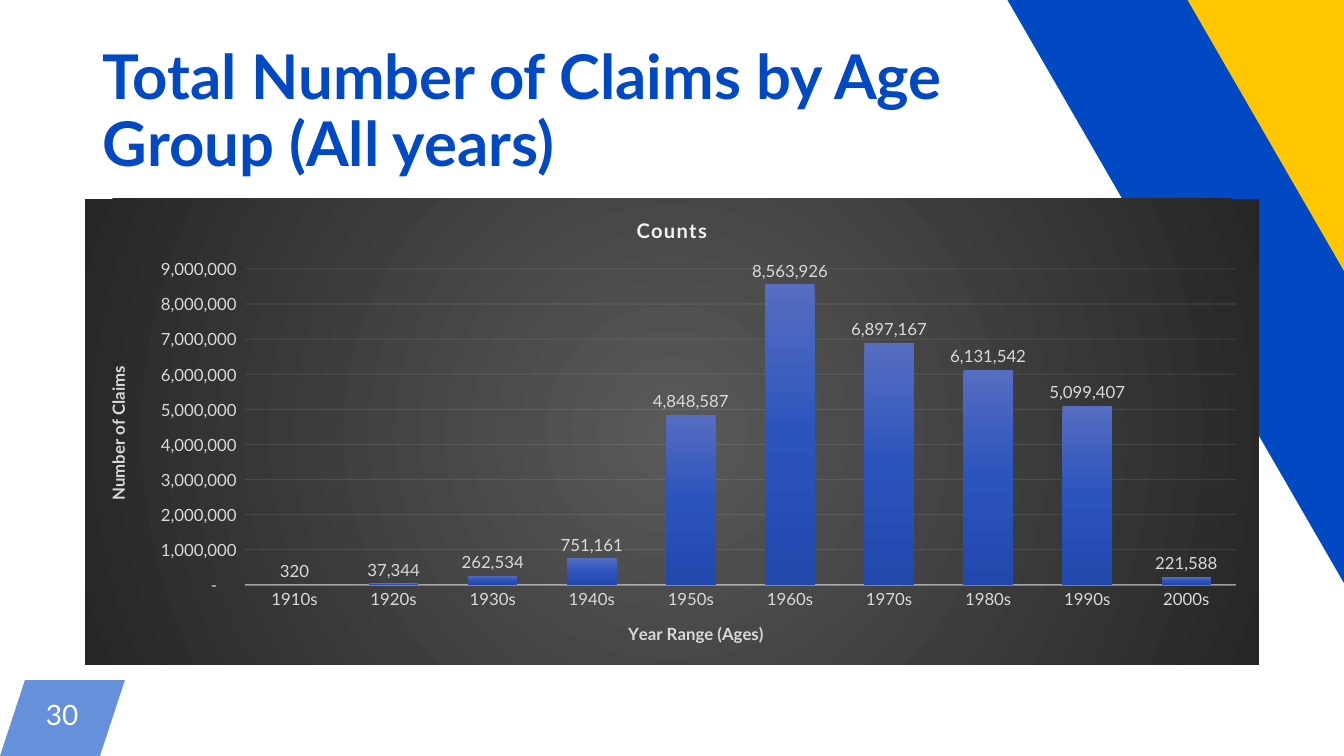
from lxml import etree
from pptx import Presentation
from pptx.chart.data import CategoryChartData
from pptx.dml.color import RGBColor
from pptx.enum.chart import XL_CHART_TYPE, XL_LABEL_POSITION, XL_TICK_MARK
from pptx.enum.text import MSO_ANCHOR, PP_ALIGN
from pptx.oxml import parse_xml
from pptx.oxml.ns import nsdecls, qn
from pptx.util import Emu, Pt

COLUMNS = XL_CHART_TYPE.COLUMN_CLUSTERED
OUTSIDE_END = XL_LABEL_POSITION.OUTSIDE_END
NO_TICK = XL_TICK_MARK.NONE
MIDDLE = MSO_ANCHOR.MIDDLE
LEFT, CENTER = PP_ALIGN.LEFT, PP_ALIGN.CENTER

COLORS = {
    "blue": "0049C2", "yellow": "FFC700", "white": "FFFFFF",
    "label": "D9D9D9", "light": "F2F2F2",
    "panel_center": "595959", "panel_edge": "262626",
    "bar_top": "566DC1", "bar_middle": "2C54BD", "bar_bottom": "2248AD",
}
NUMBER_FORMAT = '_(* #,##0_);_(* \\(#,##0\\);_(* "-"??_);_('
CLAIMS = {
    "1910s": 320, "1920s": 37344, "1930s": 262534, "1940s": 751161,
    "1950s": 4848587, "1960s": 8563926, "1970s": 6897167,
    "1980s": 6131542, "1990s": 5099407, "2000s": 221588,
}
CHART_BOX = (85, 199, 1174, 466)
PLOT_BOX = (245, 269, 991, 316)


def px(length):
    return Emu(round(length * 914400 / 100.8))


def rgb(name):
    return RGBColor.from_string(COLORS[name])


def set_alpha(colors, percent):
    for color in colors:
        etree.SubElement(color, qn("a:alpha")).set("val", str(percent * 1000))


def gradient(stops, direction):
    marks = "".join(
        f'<a:gs pos="{place * 1000}"><a:srgbClr val="{COLORS[name]}"/></a:gs>'
        for place, name in stops)
    return (f'<a:gradFill rotWithShape="1"><a:gsLst>{marks}</a:gsLst>'
            f'{direction}</a:gradFill>')


def shape_style(fill):
    return parse_xml(f'<c:spPr {nsdecls("c", "a")}>{fill}'
                     '<a:ln><a:noFill/></a:ln></c:spPr>')


def layout(left, top, width=None, height=None):
    """Manual chart layout for slide positions in px."""
    chart_left, chart_top, chart_width, chart_height = CHART_BOX
    parts = {"x": (left - chart_left) / chart_width,
             "y": (top - chart_top) / chart_height}
    target = ""
    if width:
        target = '<c:layoutTarget val="inner"/>'
        parts.update(w=width / chart_width, h=height / chart_height)
    modes = '<c:xMode val="edge"/><c:yMode val="edge"/>'
    values = "".join(f'<c:{key} val="{value:.4f}"/>' for key, value in parts.items())
    return parse_xml(f'<c:layout {nsdecls("c")}><c:manualLayout>{target}{modes}'
                     f'{values}</c:manualLayout></c:layout>')


class Slide:
    font = "Lato"

    def __init__(self, page):
        self.page = page

    def style(self, font, size, color, bold=False):
        font.name = self.font
        font.size = Pt(size)
        font.bold = bold
        font.color.rgb = rgb(color)

    def polygon(self, points, color, opacity=100):
        start, *others = [(px(x), px(y)) for x, y in points]
        builder = self.page.shapes.build_freeform(*start, scale=1.0)
        builder.add_line_segments(others, close=True)
        shape = builder.convert_to_shape()
        shape.shadow.inherit = False
        shape.fill.solid()
        shape.fill.fore_color.rgb = rgb(color)
        shape.line.fill.background()
        if opacity < 100:
            set_alpha(shape.element.xpath("./p:spPr/a:solidFill/a:srgbClr"), opacity)

    def text(self, bounds, lines, size, color, spacing, align=LEFT, bold=False,
             margin=None):
        box = self.page.shapes.add_textbox(*map(px, bounds))
        frame = box.text_frame
        frame.word_wrap = True
        frame.vertical_anchor = MIDDLE
        if margin is not None:
            frame.margin_left = frame.margin_right = px(margin)
            frame.margin_top = frame.margin_bottom = px(margin)
        para = frame.paragraphs[0]
        for index, line in enumerate(lines):
            if index:
                para.add_line_break()
            para.add_run().text = line
        para.alignment = align
        para.line_spacing = spacing
        self.style(para.font, size, color, bold)

    def chart_heading(self, title, words, size, color, corner):
        para = title.text_frame.paragraphs[0]
        span = para.add_run()
        span.text = words
        self.style(para.font, size, color, True)
        self.style(span.font, size, color, True)
        for old in title.element.findall(qn("c:layout")):
            title.element.remove(old)
        title.element.find(qn("c:tx")).addnext(layout(*corner))
        return span

    def axis(self, axis, words, corner):
        axis.major_tick_mark = axis.minor_tick_mark = NO_TICK
        self.style(axis.tick_labels.font, 12, "label")
        self.chart_heading(axis.axis_title, words, 12, "label", corner)

    def column_chart(self, name, data):
        chart_data = CategoryChartData(number_format=NUMBER_FORMAT)
        chart_data.categories = list(data)
        chart_data.add_series(name, list(data.values()))
        chart = self.page.shapes.add_chart(
            COLUMNS, *map(px, CHART_BOX), chart_data).chart
        self.style(chart.font, 12, "label")
        chart.has_legend = False
        chart.has_title = True
        span = self.chart_heading(chart.chart_title, name, 14.4, "light", (633, 213))
        span.font._element.set("spc", "100")

        # Dark radial background and plot position
        circle = ('<a:path path="circle"><a:fillToRect l="50000" t="50000" '
                  'r="50000" b="50000"/></a:path>')
        background = gradient([(0, "panel_center"), (100, "panel_edge")], circle)
        chart.element.find(qn("c:chart")).addnext(shape_style(background))
        plot_area = chart.element.find(".//" + qn("c:plotArea"))
        for old in plot_area.findall(qn("c:layout")):
            plot_area.remove(old)
        plot_area.insert(0, layout(*PLOT_BOX))

        # Axes
        years, counts = chart.category_axis, chart.value_axis
        self.axis(years, "Year Range (Ages)", (625, 619))
        self.axis(counts, "Number of Claims", (103, 363))
        years.format.line.color.rgb = rgb("light")
        years.format.line.width = Pt(1)
        set_alpha(years.format.line._ln.xpath(".//a:srgbClr"), 54)
        counts.minimum_scale, counts.maximum_scale = 0, 9000000
        counts.major_unit = 1000000
        counts.tick_labels.number_format = NUMBER_FORMAT
        counts.tick_labels.number_format_is_linked = False
        counts.format.line.fill.background()
        grid = counts.major_gridlines.format.line
        grid.color.rgb = rgb("light")
        grid.width = Pt(0.75)
        set_alpha(grid._ln.xpath(".//a:srgbClr"), 10)

        # Columns and their labels
        plot = chart.plots[0]
        plot.vary_by_categories = False
        plot.gap_width, plot.overlap = 100, -24
        series = plot.series[0]
        series.invert_if_negative = False
        bars = gradient([(0, "bar_top"), (50, "bar_middle"), (100, "bar_bottom")],
                        '<a:lin ang="5400000" scaled="0"/>')
        series.format.fill.solid()
        plain = series._element.find(qn("c:spPr"))
        series._element.replace(plain, shape_style(bars))
        labels = series.data_labels
        labels.show_value = True
        labels.position = OUTSIDE_END
        labels.number_format = NUMBER_FORMAT
        labels.number_format_is_linked = False
        self.style(labels.font, 12, "label")


def main():
    deck = Presentation()
    deck.slide_width, deck.slide_height = px(1344), px(756)
    slide = Slide(deck.slides.add_slide(deck.slide_layouts[6]))

    # Page number tab
    slide.polygon([(25, 680), (125, 680), (100, 756), (0, 756)], "blue", 60)
    slide.text((25, 681, 74, 76), ["30"], 20, "white", Pt(17.7), CENTER, margin=4)

    # Diagonal corner bands, running past the slide edge
    slide.polygon([(1055, -219), (1228, -318), (1720, 540), (1547, 638)], "yellow")
    slide.polygon([(955, -91), (1090, -169), (1584, 687), (1449, 765)], "blue")

    # Title and chart
    slide.text((93, 40, 1159, 146),
               ["Total Number of Claims by Age", "Group (All years)"],
               44, "blue", 0.9, bold=True)
    slide.column_chart("Counts", CLAIMS)

    deck.save("out.pptx")


if __name__ == "__main__":
    main()
